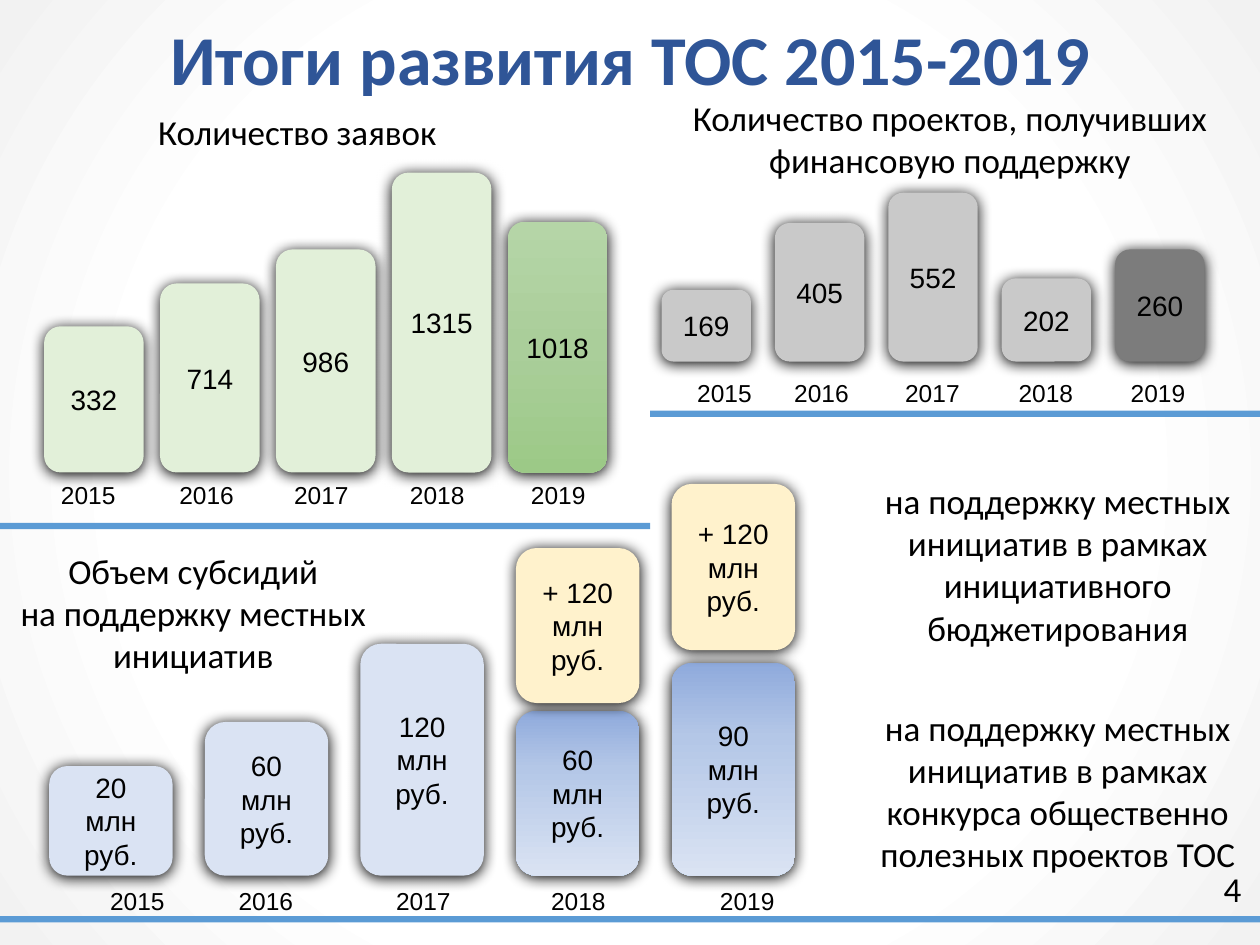
from collections import namedtuple

from lxml.etree import SubElement
from pptx import Presentation
from pptx.dml.color import RGBColor
from pptx.enum.shapes import MSO_SHAPE
from pptx.enum.text import MSO_ANCHOR, PP_ALIGN
from pptx.oxml import parse_xml
from pptx.oxml.ns import nsdecls, qn
from pptx.util import Inches, Pt

COLORS = {
    "text": "000000", "title": "2F5597", "rule": "5B9BD5",
    "green": "E2F0D9", "gray": "C9C9C9", "dark gray": "7C7C7C",
    "blue": "DAE3F3", "yellow": "FFF2CC",
}
GRADIENTS = {
    "green fade": [(0, "B5D5A7"), (50, "AACE9A"), (100, "9CC987")],
    "blue fade": [(0, "8FAADC"), (35, "B4C7E7"), (100, "DAE3F3")],
    "backdrop": [(63, "FFFFFF"), (100, "F2F2F2")],
}
DOWNWARD = '<a:lin ang="5400000" scaled="0"/>'
RADIAL = ('<a:path path="circle"><a:fillToRect l="50000" t="50000" '
          'r="50000" b="50000"/></a:path>')
YEARS = ["2015", "2016", "2017", "2018", "2019"]
LABEL_WIDTH, LABEL_HEIGHT, RULE_HEIGHT = 1.02, 0.26, 0.05

Box = namedtuple("Box", "left top width height")
# lift is the height of a bar's foot above the common baseline
Bar = namedtuple("Bar", "column value height color lift", defaults=(0,))


def rgb(name):
    return RGBColor.from_string(COLORS[name])


def place(box):
    return [Inches(length) for length in box]


def swap_for_gradient(parent, name, direction):
    """Replace the solid fill inside parent with a named gradient."""
    stops = "".join(
        f'<a:gs pos="{position * 1000}"><a:srgbClr val="{color}"/></a:gs>'
        for position, color in GRADIENTS[name])
    gradient = parse_xml(f'<a:gradFill {nsdecls("a")} rotWithShape="1">'
                         f'<a:gsLst>{stops}</a:gsLst>{direction}</a:gradFill>')
    parent.replace(parent.find(qn("a:solidFill")), gradient)


def add_glow_shadow(shape):
    shape.shadow.inherit = False
    effects = shape._element.spPr.find(qn("a:effectLst"))
    shadow = SubElement(effects, qn("a:outerShdw"), blurRad=str(Pt(8.5)),
                        dist=str(Pt(1)), dir="5400000", algn="ctr", rotWithShape="0")
    SubElement(shadow, qn("a:srgbClr"), val=COLORS["text"])


def write(frame, lines, size, font, align=PP_ALIGN.CENTER, color="text", bold=False):
    for index, line in enumerate(lines):
        paragraph = frame.add_paragraph() if index else frame.paragraphs[0]
        paragraph.alignment = align
        run = paragraph.add_run()
        run.text = line
        run.font.size = Pt(size)
        run.font.name = font
        run.font.bold = bold
        run.font.color.rgb = rgb(color)


def add_text(slide, box, lines, size=20, font="Calibri", anchor=MSO_ANCHOR.TOP,
             align=PP_ALIGN.CENTER):
    frame = slide.shapes.add_textbox(*place(box)).text_frame
    frame.word_wrap = True
    frame.vertical_anchor = anchor
    write(frame, lines, size, font, align)


def add_block(slide, preset, box, color):
    block = slide.shapes.add_shape(preset, *place(box))
    block.line.fill.background()
    block.shadow.inherit = False
    block.fill.solid()
    if color in GRADIENTS:
        swap_for_gradient(block._element.spPr, color, DOWNWARD)
    else:
        block.fill.fore_color.rgb = rgb(color)
    return block


def add_bar(slide, box, value, color):
    bar = add_block(slide, MSO_SHAPE.ROUNDED_RECTANGLE, box, color)
    add_glow_shadow(bar)
    bar.text_frame.word_wrap = True
    bar.text_frame.vertical_anchor = MSO_ANCHOR.MIDDLE
    write(bar.text_frame, [value], 16, "Arial")


def add_bar_region(slide, region, bars, first, step, width, foot, label_foot,
                   label_centers):
    """Bars and year labels above a rule; feet are measured up from the region's bottom."""
    bottom = region.top + region.height
    for bar in bars:
        add_bar(slide,
                Box(region.left + first + bar.column * step,
                    bottom - foot - bar.lift - bar.height, width, bar.height),
                bar.value, bar.color)
    for year, center in zip(YEARS, label_centers):
        add_text(slide,
                 Box(region.left + center - LABEL_WIDTH / 2, bottom - label_foot,
                     LABEL_WIDTH, LABEL_HEIGHT),
                 [year], 14, "Arial", MSO_ANCHOR.MIDDLE)
    add_block(slide, MSO_SHAPE.RECTANGLE,
              Box(region.left, bottom - RULE_HEIGHT, region.width, RULE_HEIGHT), "rule")


def add_applications(slide, region):
    add_text(slide, Box(region.left + 1, region.top, 2.72, 0.44), ["Количество заявок"])
    bars = [Bar(0, "332", 1.16, "green"), Bar(1, "714", 1.5, "green"),
            Bar(2, "986", 1.77, "green"), Bar(3, "1315", 2.38, "green"),
            Bar(4, "1018", 1.99, "green fade")]
    add_bar_region(slide, region, bars, first=0.35, step=0.92, width=0.79, foot=0.45,
                   label_foot=0.4, label_centers=[0.7, 1.64, 2.55, 3.47, 4.43])


def add_funded_projects(slide, region):
    add_text(slide, Box(region.left + 0.21, region.top, 4.34, 0.77),
             ["Количество проектов, получивших финансовую поддержку"])
    bars = [Bar(0, "169", 0.57, "gray"), Bar(1, "405", 1.1, "gray"),
            Bar(2, "552", 1.34, "gray"), Bar(3, "202", 0.66, "gray"),
            Bar(4, "260", 0.89, "dark gray")]
    add_bar_region(slide, region, bars, first=0.09, step=0.9, width=0.71, foot=0.44,
                   label_foot=0.32, label_centers=[0.59, 1.36, 2.24, 3.14, 4.03])


def add_subsidies(slide, region):
    add_text(slide, Box(region.left, region.top + 0.55, 3.07, 1.11),
             ["Объем субсидий", "на поддержку местных инициатив"])
    purposes = [
        "на поддержку местных инициатив в рамках инициативного бюджетирования",
        "на поддержку местных инициатив в рамках конкурса общественно полезных "
        "проектов ТОС",
    ]
    for row, purpose in enumerate(purposes):
        add_text(slide, Box(region.left + 6.79, region.top + row * 1.8, 3.21, 1.45),
                 [purpose])
    bars = [Bar(0, "20 млн руб.", 0.87, "blue"), Bar(1, "60 млн руб.", 1.22, "blue"),
            Bar(2, "120 млн руб.", 1.84, "blue"),
            Bar(3, "60 млн руб.", 1.31, "blue fade"),
            Bar(3, "+ 120 млн руб.", 1.23, "yellow", lift=1.37),
            Bar(4, "90 млн руб.", 1.69, "blue fade"),
            Bar(4, "+ 120 млн руб.", 1.32, "yellow", lift=1.79)]
    add_bar_region(slide, region, bars, first=0.39, step=1.235, width=0.98, foot=0.37,
                   label_foot=0.3, label_centers=[1.09, 2.11, 3.36, 4.59, 5.93])


def add_title(slide, box):
    title = slide.shapes.title
    title.left, title.top, title.width, title.height = place(box)
    title.text_frame.vertical_anchor = MSO_ANCHOR.MIDDLE
    write(title.text_frame, ["Итоги развития ТОС 2015-2019"], 40, "Calibri",
          color="title", bold=True)
    title.text_frame.paragraphs[0].line_spacing = 0.9


def main():
    deck = Presentation()
    deck.slide_width, deck.slide_height = Inches(10), Inches(7.5)
    slide = deck.slides.add_slide(deck.slide_layouts[5])
    slide.background.fill.solid()
    swap_for_gradient(slide._element.find(".//" + qn("p:bgPr")), "backdrop", RADIAL)

    add_title(slide, Box(0, 0.01, 10, 0.98))
    add_applications(slide, Box(0, 0.83, 5.16, 3.37))
    add_funded_projects(slide, Box(5.16, 0.72, 4.84, 2.59))
    add_subsidies(slide, Box(0, 3.76, 10, 3.56))
    add_text(slide, Box(9.49, 6.82, 0.46, 0.47), ["4"], anchor=MSO_ANCHOR.MIDDLE,
             align=PP_ALIGN.RIGHT)
    deck.save("out.pptx")


if __name__ == "__main__":
    main()
